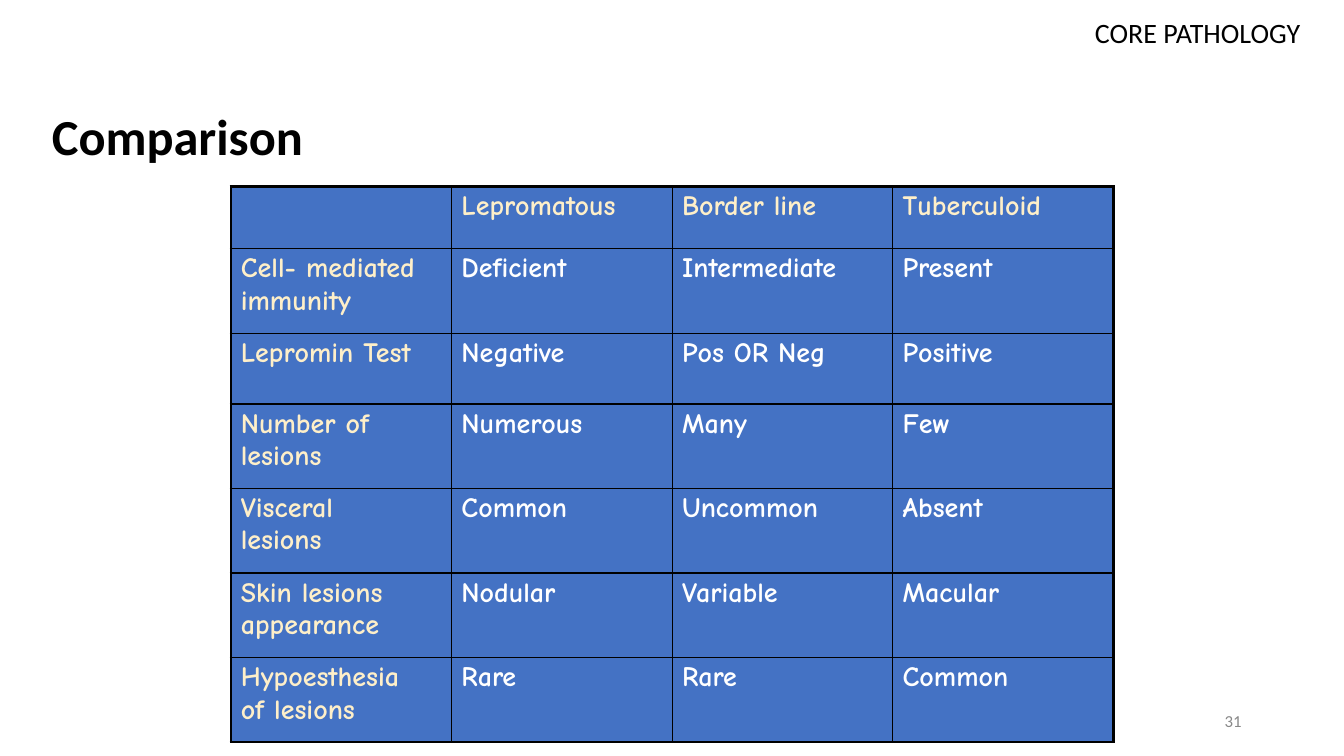
import pptx
import pptx.dml.color
import pptx.enum.text
import pptx.oxml
import pptx.oxml.ns
import pptx.util

Cm = pptx.util.Cm
Pt = pptx.util.Pt
ALIGN = pptx.enum.text.PP_ALIGN
ANCHOR = pptx.enum.text.MSO_ANCHOR


def color(hex_string):
    return pptx.dml.color.RGBColor.from_string(hex_string)


TITLE_FORMAT = {"name": "Calibri", "size": Pt(36), "bold": True, "color": "000000"}
COURSE_FORMAT = {"name": "Calibri", "size": Pt(20), "bold": False, "color": "000000"}
NUMBER_FORMAT = {"name": "Calibri", "size": Pt(12), "bold": False, "color": "888888"}
VALUE_FORMAT = {"name": "Comic Neue", "size": Pt(20), "bold": True, "color": "FFFFFF"}
LABEL_FORMAT = {**VALUE_FORMAT, "color": "FEEFC9"}

CELL_FILL = "4472C4"
BORDER_COLOR = "000000"
INNER_BORDER = Pt(1)
OUTER_BORDER = Pt(2.25)
TEXT_INDENT = Cm(0.25)
LABEL_RIGHT_MARGIN = Cm(0.76)

COMPARISON = [
    ["", "Lepromatous", "Border line", "Tuberculoid"],
    ["Cell- mediated\nimmunity", "Deficient", "Intermediate", "Present"],
    ["Lepromin Test", "Negative", "Pos OR Neg", "Positive"],
    ["Number of\nlesions", "Numerous", "Many", "Few"],
    ["Visceral lesions", "Common", "Uncommon", "Absent"],
    ["Skin lesions\nappearance", "Nodular", "Variable", "Macular"],
    ["Hypoesthesia\nof lesions", "Rare", "Rare", "Common"],
]
HEADER_HEIGHT, TEST_HEIGHT, ROW_HEIGHT = Cm(1.57), Cm(1.78), Cm(2.13)
ROW_HEIGHTS = [HEADER_HEIGHT, ROW_HEIGHT, TEST_HEIGHT] + [ROW_HEIGHT] * 4


def apply_font(font, text_format):
    for key, value in text_format.items():
        if key == "color":
            font.color.rgb = color(value)
        else:
            setattr(font, key, value)


def add_text(slide, box, text, text_format, alignment, anchor, inset, line_spacing=1.0):
    text_frame = slide.shapes.add_textbox(*box).text_frame
    frame_format = {
        "word_wrap": True,
        "vertical_anchor": anchor,
        "margin_top": inset,
        "margin_bottom": inset,
    }
    for key, value in frame_format.items():
        setattr(text_frame, key, value)
    paragraph = text_frame.paragraphs[0]
    paragraph.text = text
    paragraph.alignment = alignment
    paragraph.line_spacing = line_spacing
    apply_font(paragraph.runs[0].font, text_format)


def set_borders(cell, widths):
    properties = cell._tc.get_or_add_tcPr()
    for position, (side, width) in enumerate(widths.items()):
        line = pptx.oxml.parse_xml(
            f'<a:{side} {pptx.oxml.ns.nsdecls("a")} w="{width}"><a:solidFill>'
            f'<a:srgbClr val="{BORDER_COLOR}"/></a:solidFill></a:{side}>'
        )
        properties.insert(position, line)


def fill_cell(cell, text, text_format, right_margin):
    cell_format = {
        "margin_left": 0,
        "margin_top": Cm(0.1),
        "margin_right": right_margin,
        "margin_bottom": 0,
        "vertical_anchor": ANCHOR.TOP,
    }
    for key, value in cell_format.items():
        setattr(cell, key, value)
    cell.fill.solid()
    cell.fill.fore_color.rgb = color(CELL_FILL)
    cell.text = text
    for paragraph in cell.text_frame.paragraphs:
        paragraph._p.get_or_add_pPr().set("marL", str(TEXT_INDENT))
        apply_font(paragraph.font, text_format)
        for run in paragraph.runs:
            apply_font(run.font, text_format)


def add_comparison_table(slide, box):
    last_row, last_column = len(COMPARISON) - 1, len(COMPARISON[0]) - 1
    table = slide.shapes.add_table(last_row + 1, last_column + 1, *box).table
    for column in table.columns:
        column.width = int(box[2] / (last_column + 1))
    for row, height in zip(table.rows, ROW_HEIGHTS):
        row.height = height
    for row_index, texts in enumerate(COMPARISON):
        for column_index, text in enumerate(texts):
            cell = table.cell(row_index, column_index)
            is_label = row_index == 0 or column_index == 0
            right_margin = LABEL_RIGHT_MARGIN if column_index == 0 else 0
            fill_cell(cell, text, LABEL_FORMAT if is_label else VALUE_FORMAT, right_margin)
            outer_sides = {
                "lnL": column_index == 0,
                "lnR": column_index == last_column,
                "lnT": row_index == 0,
                "lnB": row_index == last_row,
            }
            set_borders(cell, {
                side: OUTER_BORDER if outer else INNER_BORDER
                for side, outer in outer_sides.items()
            })


def add_heading(slide, box):
    left, top, width, height = box
    add_text(slide, (left, top + Cm(1.3), Cm(31.55), Cm(3.68)), "Comparison",
             TITLE_FORMAT, ALIGN.LEFT, ANCHOR.MIDDLE, Cm(0.13), 1.15)
    course_width = Cm(8.81)
    add_text(slide, (left + width - course_width, top, course_width, Cm(1.14)),
             "CORE PATHOLOGY", COURSE_FORMAT, ALIGN.RIGHT, ANCHOR.TOP, Cm(0.25))


def add_slide_number(slide, box):
    add_text(slide, box, "31", NUMBER_FORMAT, ALIGN.RIGHT, ANCHOR.MIDDLE, Cm(0.13))


def main():
    presentation = pptx.Presentation()
    presentation.slide_width = Cm(33.87)
    presentation.slide_height = Cm(19.05)
    slide = presentation.slides.add_slide(presentation.slide_layouts[6])
    add_slide_number(slide, (Cm(23.92), Cm(17.66), Cm(7.62), Cm(1.01)))
    add_heading(slide, (Cm(1.06), Cm(0.15), Cm(31.96), Cm(4.98)))
    add_comparison_table(slide, (Cm(5.82), Cm(4.7), Cm(22.24), sum(ROW_HEIGHTS)))
    presentation.save("out.pptx")


if __name__ == "__main__":
    main()
